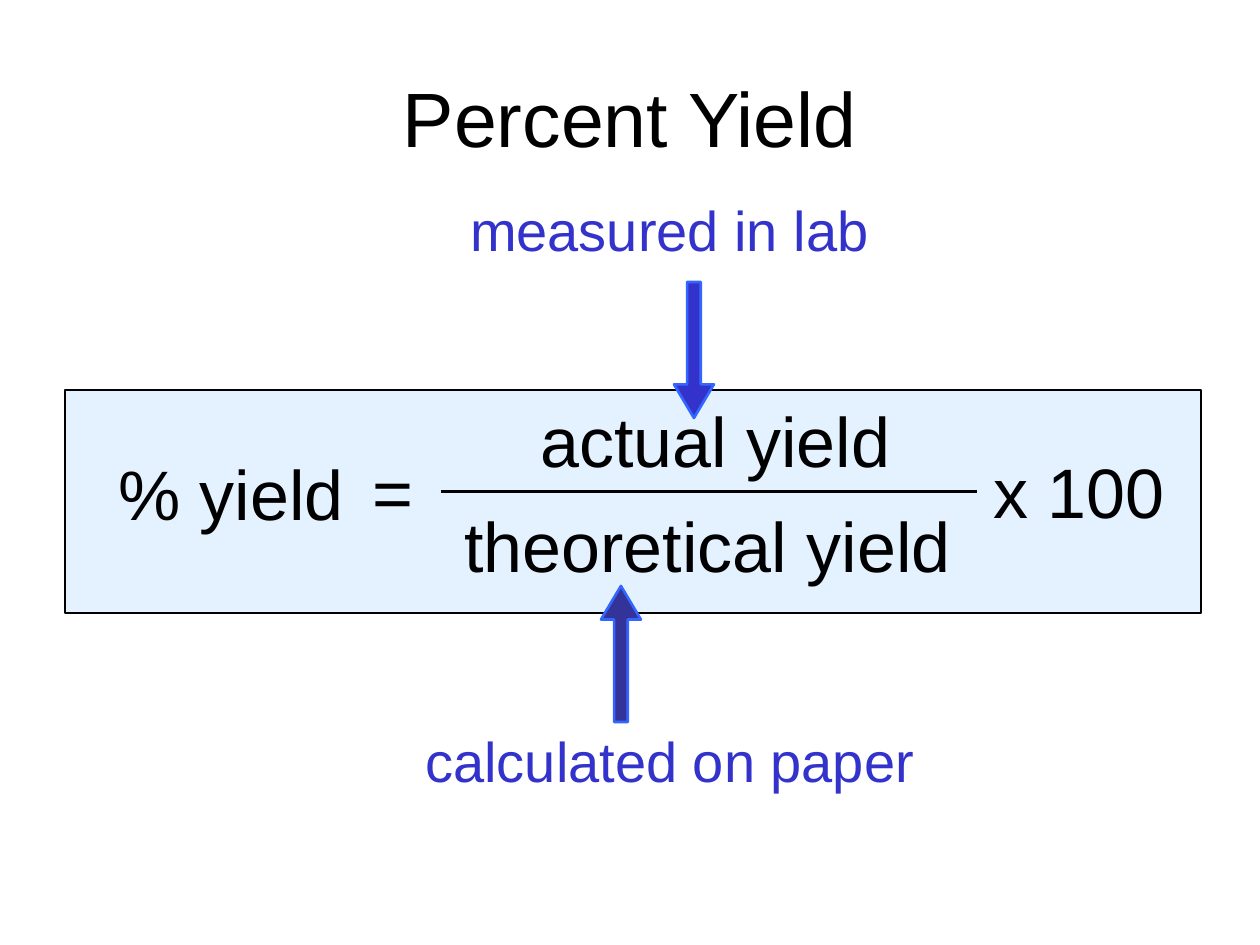
from lxml import etree
from pptx import Presentation
from pptx.dml.color import RGBColor
from pptx.enum.shapes import MSO_CONNECTOR, MSO_SHAPE
from pptx.enum.text import MSO_ANCHOR, PP_ALIGN
from pptx.oxml.ns import qn
from pptx.util import Emu, Pt

RECTANGLE = MSO_SHAPE.RECTANGLE
UP, DOWN = MSO_SHAPE.UP_ARROW, MSO_SHAPE.DOWN_ARROW
STRAIGHT = MSO_CONNECTOR.STRAIGHT
LEFT, CENTER = PP_ALIGN.LEFT, PP_ALIGN.CENTER
TOP, MIDDLE = MSO_ANCHOR.TOP, MSO_ANCHOR.MIDDLE

PX = 914400 // 126
COLORS = {"black": "000000", "panel": "99CCFF", "blue": "3333CC",
          "navy": "333399", "outline": "3366FF"}

FORMATS = {
    "title": {"size": 44, "color": "black", "align": CENTER, "anchor": MIDDLE,
              "wrap": True, "spacing": 1.0},
    "note": {"size": 32, "color": "blue", "align": CENTER, "anchor": TOP,
             "wrap": True, "spacing": 1.5},
    "formula": {"size": 40, "color": "black", "align": LEFT, "anchor": TOP,
                "wrap": False, "spacing": 1.0},
}
PANEL = (65, 390, 1136, 223)
PANEL_OPACITY = 26
FRACTION_BAR = (441, 492, 977, 492)
ARROWS = [
    (UP, (601, 586, 40, 136), "navy"),
    (DOWN, (674, 282, 40, 136), "blue"),
]
TEXTS = [
    ("Percent Yield", "title", (63, 38, 1134, 158)),
    ("calculated on paper", "note", (200, 687, 940, 152)),
    ("measured in lab", "note", (204, 156, 931, 152)),
    ("% yield", "formula", (106, 444, 290, 97)),
    ("=", "formula", (360, 442, 67, 97)),
    ("actual yield", "formula", (528, 391, 375, 97)),
    ("theoretical yield", "formula", (452, 496, 512, 97)),
    ("x 100", "formula", (981, 442, 197, 97)),
]


def scaled(lengths):
    return [Emu(length * PX) for length in lengths]


def color(name):
    return RGBColor.from_string(COLORS[name])


def add_shape(slide, kind, box, fill, line, width):
    shape = slide.shapes.add_shape(kind, *scaled(box))
    shape.shadow.inherit = False
    shape.fill.solid()
    shape.fill.fore_color.rgb = color(fill)
    shape.line.color.rgb = color(line)
    shape.line.width = Pt(width)
    return shape


def add_panel(slide):
    panel = add_shape(slide, RECTANGLE, PANEL, "panel", "black", 0.75)
    fill_color = panel._element.spPr.find(qn("a:solidFill"))[0]
    etree.SubElement(fill_color, qn("a:alpha"), val=str(PANEL_OPACITY * 1000))


def add_arrow(slide, kind, box, fill):
    arrow = add_shape(slide, kind, box, fill, "outline", 1.5)
    arrow.adjustments[0] = 0.34
    arrow.adjustments[1] = 0.84


def add_text(slide, text, style, box):
    values = FORMATS[style]
    frame = slide.shapes.add_textbox(*scaled(box)).text_frame
    frame.word_wrap = values["wrap"]
    frame.vertical_anchor = values["anchor"]
    paragraph = frame.paragraphs[0]
    paragraph.text = text
    paragraph.alignment = values["align"]
    paragraph.line_spacing = values["spacing"]
    font = paragraph.runs[0].font
    for name, value in {"name": "Arial", "size": Pt(values["size"])}.items():
        setattr(font, name, value)
    font.color.rgb = color(values["color"])


def add_fraction_bar(slide):
    bar = slide.shapes.add_connector(STRAIGHT, *scaled(FRACTION_BAR))
    bar.line.color.rgb = color("black")
    bar.line.width = Pt(1.75)
    etree.SubElement(bar._element.spPr, qn("a:effectLst"))


def main():
    presentation = Presentation()
    presentation.slide_width, presentation.slide_height = scaled((1260, 945))
    slide = presentation.slides.add_slide(presentation.slide_layouts[6])
    add_panel(slide)
    for kind, box, fill in ARROWS:
        add_arrow(slide, kind, box, fill)
    for text, style, box in TEXTS:
        add_text(slide, text, style, box)
    add_fraction_bar(slide)
    presentation.save("out.pptx")


if __name__ == "__main__":
    main()
